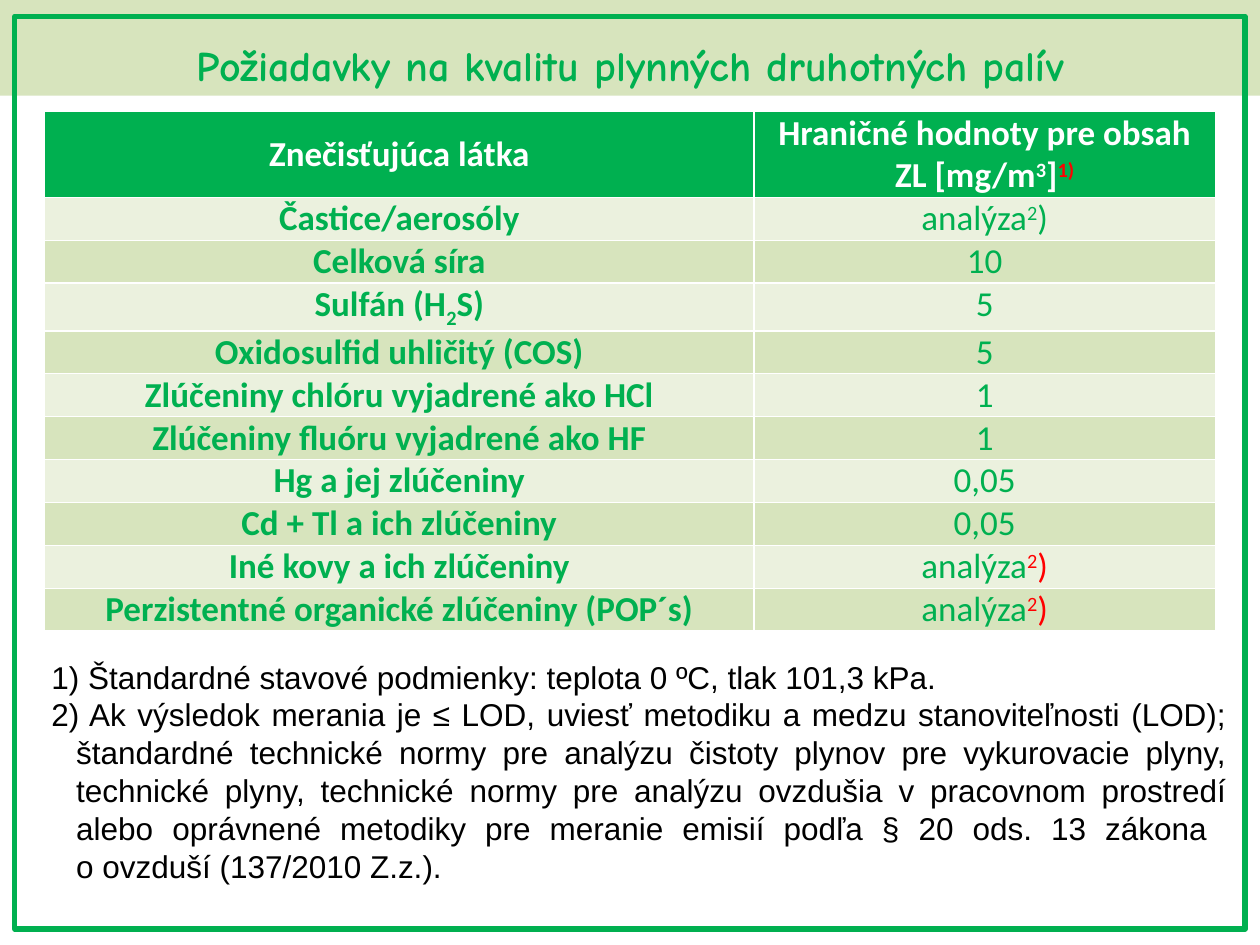
from dataclasses import dataclass

from lxml import etree
from pptx import Presentation
from pptx.dml.color import RGBColor
from pptx.enum.shapes import MSO_SHAPE
from pptx.enum.text import MSO_ANCHOR, MSO_AUTO_SIZE, PP_ALIGN
from pptx.oxml.ns import qn
from pptx.util import Cm, Pt

RECTANGLE = MSO_SHAPE.RECTANGLE
MIDDLE, TOP, BOTTOM = MSO_ANCHOR.MIDDLE, MSO_ANCHOR.TOP, MSO_ANCHOR.BOTTOM
CENTER, JUSTIFY = PP_ALIGN.CENTER, PP_ALIGN.JUSTIFY
NO_AUTO_SIZE = MSO_AUTO_SIZE.NONE
SUPERSCRIPT, SUBSCRIPT = 30000, -25000
TITLE_AND_CONTENT = 1


@dataclass(frozen=True)
class Theme:
    green: RGBColor = RGBColor(0x00, 0xB0, 0x50)
    light_green: RGBColor = RGBColor(0xD7, 0xE4, 0xBD)
    pale_green: RGBColor = RGBColor(0xEB, 0xF1, 0xDE)
    red: RGBColor = RGBColor(0xFF, 0x00, 0x00)
    white: RGBColor = RGBColor(0xFF, 0xFF, 0xFF)
    black: RGBColor = RGBColor(0x00, 0x00, 0x00)
    title_font: str = "Comic Neue"
    table_font: str = "Calibri"
    body_font: str = "Arial"
    title_size: Pt = Pt(24)
    table_size: Pt = Pt(20)
    body_size: Pt = Pt(18)


THEME = Theme()

# A cell is a list of runs: text, baseline shift, own colour.
ANALYSIS = [("analýza", 0, None), ("2", SUPERSCRIPT, None), (")", 0, None)]
ANALYSIS_RED = [("analýza", 0, None), ("2", SUPERSCRIPT, THEME.red),
                (")", 0, THEME.red)]
LIMIT_HEADER = [("Hraničné hodnoty pre obsah ZL [mg/m", 0, None),
                ("3", SUPERSCRIPT, None), ("]", 0, None),
                ("1)", SUPERSCRIPT, THEME.red)]
HYDROGEN_SULFIDE = [("Sulfán (H", 0, None), ("2", SUBSCRIPT, None),
                    ("S)", 0, None)]
LIMITS = [
    ("Znečisťujúca látka", LIMIT_HEADER),
    ("Častice/aerosóly", ANALYSIS),
    ("Celková síra", "10"),
    (HYDROGEN_SULFIDE, "5"),
    ("Oxidosulfid uhličitý (COS)", "5"),
    ("Zlúčeniny chlóru vyjadrené ako HCl", "1"),
    ("Zlúčeniny fluóru vyjadrené ako HF", "1"),
    ("Hg a jej zlúčeniny", "0,05"),
    ("Cd + Tl a ich zlúčeniny", "0,05"),
    ("Iné kovy a ich zlúčeniny", ANALYSIS_RED),
    ("Perzistentné organické zlúčeniny (POP´s)", ANALYSIS_RED),
]
EXPLANATIONS = [
    "1) Štandardné stavové podmienky: teplota 0 ºC, tlak 101,3 kPa.",
    "2) Ak výsledok merania je ≤ LOD, uviesť metodiku a medzu stanoviteľnosti "
    "(LOD); štandardné technické normy pre analýzu čistoty plynov pre "
    "vykurovacie plyny, technické plyny, technické normy pre analýzu ovzdušia "
    "v pracovnom prostredí alebo oprávnené metodiky pre meranie emisií podľa "
    "§ 20 ods. 13 zákona \vo ovzduší (137/2010 Z.z.).",
]


class SlideBuilder:
    def __init__(self, slide, theme):
        self.slide = slide
        self.theme = theme

    def place(self, shape, left, top, width, height):
        shape.left, shape.top = Cm(left), Cm(top)
        shape.width, shape.height = Cm(width), Cm(height)

    def style(self, paragraph, font_name, size, color, bold, alignment):
        font = paragraph.font
        font.name, font.size, font.bold = font_name, size, bold
        font.color.rgb = color
        paragraph.alignment = alignment

    def title(self, text, *box):
        theme = self.theme
        shape = self.slide.shapes.title
        self.place(shape, *box)
        shape.fill.solid()
        shape.fill.fore_color.rgb = theme.light_green
        frame = shape.text_frame
        frame.text = text
        frame.auto_size = NO_AUTO_SIZE
        frame.vertical_anchor = BOTTOM
        paragraph = frame.paragraphs[0]
        self.style(paragraph, theme.title_font, theme.title_size,
                   theme.green, True, CENTER)
        paragraph.space_before = Pt(6)

    def border(self, *box):
        shape = self.slide.shapes.add_shape(RECTANGLE, *map(Cm, box))
        shape.shadow.inherit = False
        shape.fill.background()
        shape.line.color.rgb = self.theme.green
        shape.line.width = Pt(3)

    def cell(self, cell, content, fill, color, bold, anchor):
        cell.fill.solid()
        cell.fill.fore_color.rgb = fill
        cell.vertical_anchor = anchor
        cell.margin_left = cell.margin_right = Cm(0.18)
        cell.margin_top = cell.margin_bottom = 0
        paragraph = cell.text_frame.paragraphs[0]
        self.style(paragraph, self.theme.table_font, self.theme.table_size,
                   color, bold, CENTER)
        runs = [(content, 0, None)] if isinstance(content, str) else content
        for text, baseline, own_color in runs:
            run = paragraph.add_run()
            run.text = text
            if baseline:
                run._r.get_or_add_rPr().set("baseline", str(baseline))
            if own_color is not None:
                run.font.color.rgb = own_color

    def table(self, rows, left, top, column_widths, row_heights):
        """The default table style supplies the white cell borders."""
        theme = self.theme
        table = self.slide.shapes.add_table(
            len(rows), len(column_widths), Cm(left), Cm(top),
            Cm(sum(column_widths)), Cm(sum(row_heights))).table
        for column, width in zip(table.columns, column_widths):
            column.width = Cm(width)
        for index, (row, height) in enumerate(zip(rows, row_heights)):
            table.rows[index].height = Cm(height)
            header = index == 0
            band = theme.pale_green if index % 2 else theme.light_green
            for column, content in enumerate(row):
                self.cell(table.cell(index, column), content,
                          theme.green if header else band,
                          theme.white if header else theme.green,
                          header or column == 0,
                          MIDDLE if header else TOP)

    def explanations(self, texts, *box):
        theme = self.theme
        shape = self.slide.placeholders[1]
        self.place(shape, *box)
        frame = shape.text_frame
        frame.auto_size = NO_AUTO_SIZE
        for index, text in enumerate(texts):
            paragraph = frame.add_paragraph() if index else frame.paragraphs[0]
            paragraph.text = text
            self.style(paragraph, theme.body_font, theme.body_size,
                       theme.black, False, JUSTIFY)
            paragraph.space_before = Pt(0 if index else 6)
            properties = paragraph._p.get_or_add_pPr()
            properties.set("marL", str(Cm(1)))
            properties.set("indent", str(-Cm(0.5)))
            bullet = etree.Element(qn("a:buNone"))
            properties.find(qn("a:spcBef")).addnext(bullet)


def main():
    presentation = Presentation()
    presentation.slide_width, presentation.slide_height = Cm(25.4), Cm(19.05)
    layout = presentation.slide_layouts[TITLE_AND_CONTENT]
    builder = SlideBuilder(presentation.slides.add_slide(layout), THEME)
    builder.title("Požiadavky na kvalitu plynných druhotných palív",
                  0, 0, 25.4, 1.93)
    builder.border(0.3, 0.33, 24.8, 18.4)
    row_heights = [1.72] + [0.86] * (len(LIMITS) - 1)
    builder.table(LIMITS, 0.9, 2.25, [14.3, 9.3], row_heights)
    builder.explanations(EXPLANATIONS, 0.28, 13.13, 24.7, 4.88)
    presentation.save("out.pptx")


if __name__ == "__main__":
    main()
